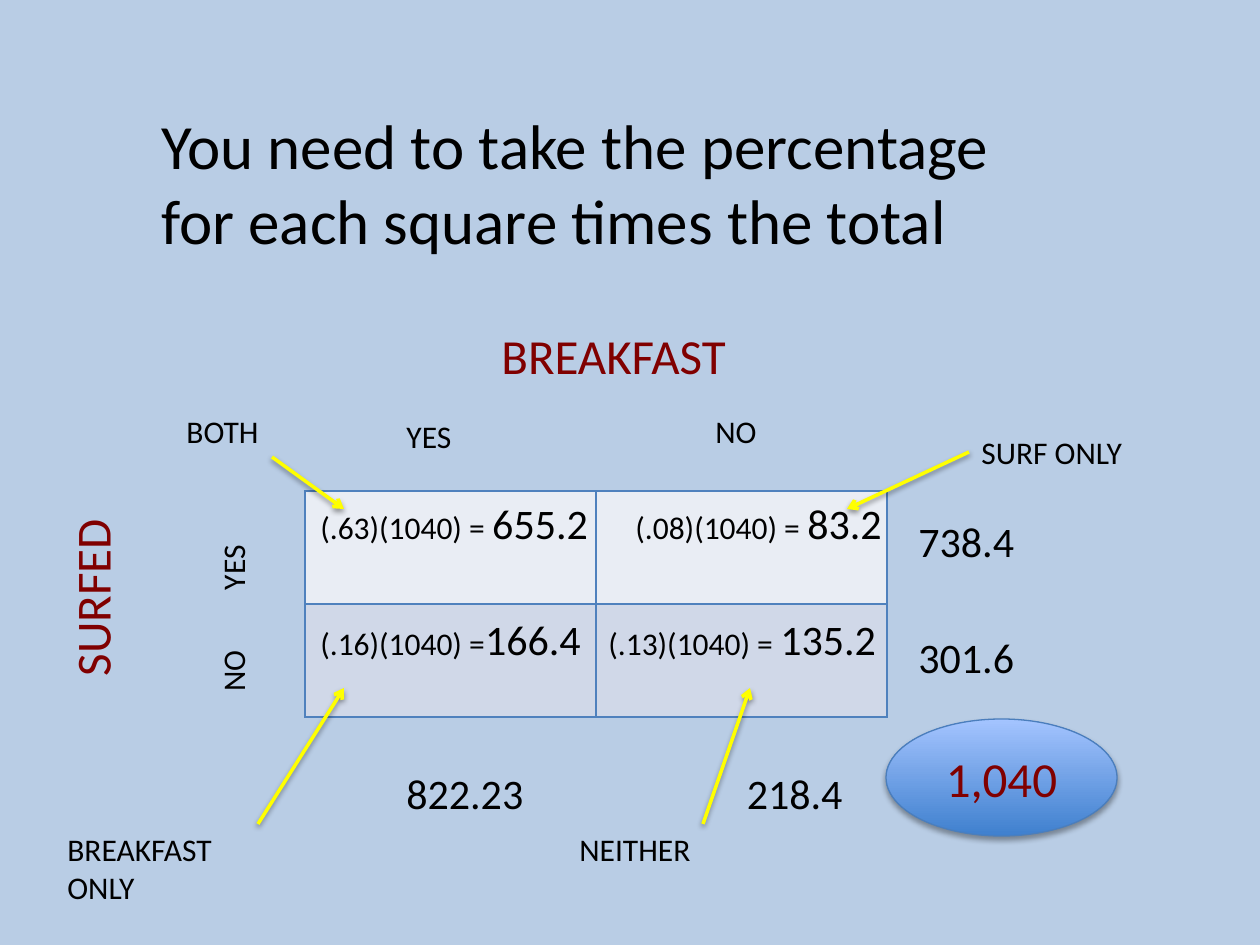
from dataclasses import dataclass

from lxml import etree
from pptx import Presentation
from pptx.dml.color import RGBColor
from pptx.enum import shapes, text
from pptx.oxml import ns
from pptx.util import Emu, Pt

SCALE = 914400 / 126  # EMU in one px
FONT = "Calibri"
BLACK, RED, YELLOW = "000000", "800000", "FFFF00"
LEFT, MID, RIGHT = text.PP_ALIGN.LEFT, text.PP_ALIGN.CENTER, text.PP_ALIGN.RIGHT


@dataclass
class Label:
    runs: list[tuple[str, int]]
    box: tuple[int, int, int, int]
    color: str = BLACK
    align: text.PP_ALIGN = LEFT
    turn: int = 0
    wrap: bool = True


@dataclass
class Arrow:
    start: tuple[int, int]
    end: tuple[int, int]
    source: str = ""  # label whose left side it leaves


def px(n: int) -> Emu:
    return Emu(round(n * SCALE))


def rgb(color: str) -> RGBColor:
    return RGBColor.from_string(color)


def sub(parent, tag: str, **attrs):
    return etree.SubElement(parent, ns.qn(tag), attrs)


def shade(shape, alpha: int, dist: float) -> None:
    """Soft black shadow straight below the shape."""
    props = shape._element.spPr
    for old in props.findall(ns.qn("a:effectLst")):
        props.remove(old)
    shadow = sub(sub(props, "a:effectLst"), "a:outerShdw", blurRad=str(Pt(3.1)),
                 dist=str(Pt(dist)), dir="5400000", rotWithShape="0")
    sub(sub(shadow, "a:srgbClr", val=BLACK), "a:alpha", val=str(alpha * 1000))


def write(frame, runs: list[tuple[str, int]], color: str, align) -> None:
    para = frame.paragraphs[0]
    para.alignment = align
    for words, size in runs:
        run = para.add_run()
        run.text = words
        run.font.name, run.font.size = FONT, Pt(size)
        run.font.color.rgb = rgb(color)


def draw_label(slide, label: Label):
    box = slide.shapes.add_textbox(*map(px, label.box))
    box.rotation = label.turn
    frame = box.text_frame
    frame.word_wrap = label.wrap
    frame.auto_size = text.MSO_AUTO_SIZE.SHAPE_TO_FIT_TEXT
    write(frame, label.runs, label.color, label.align)
    return box


def draw_arrow(slide, arrow: Arrow, boxes: dict) -> None:
    line = slide.shapes.add_connector(
        shapes.MSO_CONNECTOR.STRAIGHT, *map(px, arrow.start + arrow.end))
    if arrow.source:
        line.begin_connect(boxes[arrow.source], 1)
    line.line.color.rgb = rgb(YELLOW)
    line.line.width = Pt(2)
    sub(line.line._get_or_add_ln(), "a:tailEnd", type="arrow")
    shade(line, 38, 1.6)


def draw_grid(slide) -> None:
    table = slide.shapes.add_table(2, 2, *map(px, (305, 491, 582, 226))).table
    for row, color in enumerate(("E9EDF4", "D0D8E8")):
        table.rows[row].height = px(113)
        for cell in table.rows[row].cells:
            props = cell._tc.get_or_add_tcPr()
            for side in "LRTB":
                edge = sub(props, f"a:ln{side}", w=str(Pt(1)))
                sub(sub(edge, "a:solidFill"), "a:srgbClr", val="4F81BD")
            cell.fill.solid()
            cell.fill.fore_color.rgb = rgb(color)


def draw_total(slide) -> None:
    oval = slide.shapes.add_shape(
        shapes.MSO_SHAPE.OVAL, *map(px, (886, 719, 231, 117)))
    oval.fill.gradient()
    oval.fill.gradient_angle = 90
    for stop, color in zip(oval.fill.gradient_stops, ("3F80CE", "A4C4FF")):
        stop.color.rgb = rgb(color)
    oval.line.color.rgb = rgb("4B7EBC")
    oval.line.width = Pt(0.75)
    shade(oval, 35, 1.8)
    oval.text_frame.vertical_anchor = text.MSO_ANCHOR.MIDDLE
    write(oval.text_frame, [("1,040", 28)], RED, MID)


LABELS = [
    # Products in the four squares
    Label([("(.63)(1040) = ", 18), ("655.2", 24)], (308, 491, 329, 63)),
    Label([("(.16)(1040) =", 18), ("166.4", 24)], (308, 607, 289, 63), wrap=False),
    Label([("(.08)(1040) = ", 18), ("83.2", 24)], (623, 491, 286, 63)),
    Label([("(.13)(1040) = ", 18), ("135.2", 24)], (596, 607, 313, 63)),
    # Column and row sums
    Label([("822.23", 24)], (394, 761, 226, 63)),
    Label([("738.4", 24)], (906, 509, 210, 63)),
    Label([("301.6", 24)], (906, 625, 210, 63)),
    Label([("218.4", 24)], (645, 761, 210, 63), align=RIGHT),
    # Headings
    Label([("BREAKFAST", 28)], (489, 319, 261, 72), RED),
    Label([("SURFED", 28)], (-39, 522, 261, 72), RED, turn=270),
    Label([("YES", 18)], (394, 411, 95, 50)),
    Label([("NO", 18)], (703, 406, 95, 50)),
    Label([("YES", 18)], (185, 530, 95, 50), turn=270),
    Label([("NO", 18)], (185, 646, 95, 50), align=MID, turn=270),
    # Names of the squares
    Label([("BOTH", 18)], (174, 406, 131, 50)),
    Label([("BREAKFAST ONLY", 18)], (55, 824, 203, 89)),
    Label([("SURF ONLY", 18)], (969, 427, 208, 50)),
    Label([("NEITHER", 18)], (567, 824, 231, 50)),
    # Instruction
    Label([("You need to take the percentage for each square times the total", 36)],
          (149, 100, 887, 165)),
]

ARROWS = [
    Arrow((272, 457), (344, 509)),
    Arrow((258, 824), (344, 688)),
    Arrow((969, 452), (847, 509), "SURF ONLY"),
    Arrow((703, 824), (750, 688)),
]


def main() -> None:
    deck = Presentation()
    deck.slide_width, deck.slide_height = px(1260), px(945)
    slide = deck.slides.add_slide(deck.slide_layouts[6])
    slide.background.fill.solid()
    slide.background.fill.fore_color.rgb = rgb("B9CDE5")

    draw_grid(slide)
    boxes = {label.runs[0][0]: draw_label(slide, label) for label in LABELS}
    draw_total(slide)
    for arrow in ARROWS:
        draw_arrow(slide, arrow, boxes)
    deck.save("out.pptx")


if __name__ == "__main__":
    main()
